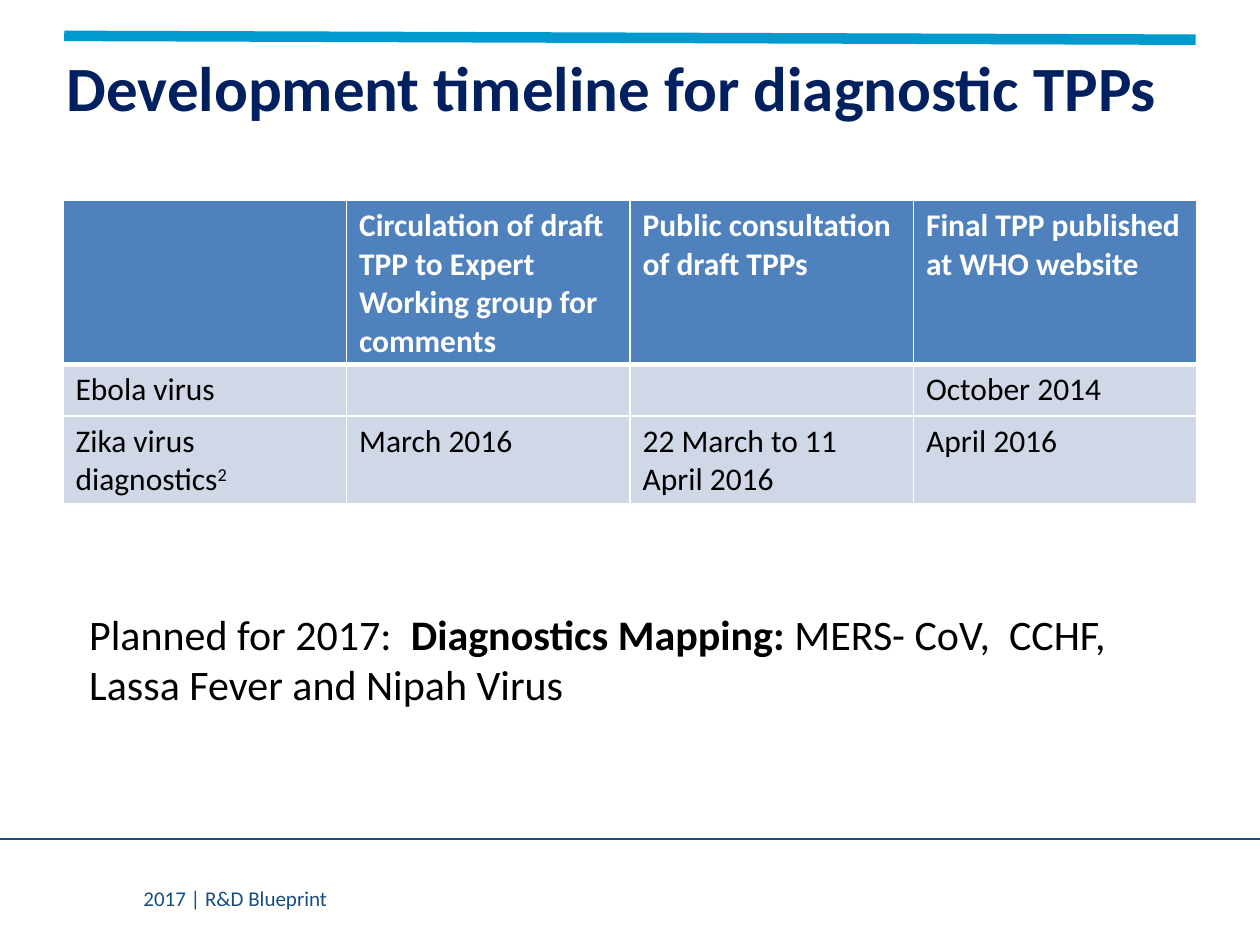
from dataclasses import dataclass
from typing import Optional

from lxml import etree
from pptx import Presentation
from pptx import util as u
from pptx.dml.color import RGBColor
from pptx.enum import shapes, text
from pptx.oxml.ns import qn

WIDTH, HEIGHT = u.Inches(10), u.Inches(7.5)
FONT = "Calibri"
COLORS = {
    "background": "FFFFFE", "navy": "002060", "footer": "174E7F", "accent": "009ACF",
    "header": "4F81BD", "band": "D0D8E8", "border": "FFFFFF", "body": "000000",
}


@dataclass
class Run:
    text: str
    size: float
    color: str
    bold: bool = False
    superscript: bool = False


@dataclass
class Box:
    """Left, top, width and height as shares of the slide's size."""
    left: float
    top: float
    width: float
    height: float

    def place(self) -> dict:
        return {
            "left": int(self.left * WIDTH), "top": int(self.top * HEIGHT),
            "width": int(self.width * WIDTH), "height": int(self.height * HEIGHT),
        }


@dataclass
class Rule:
    """A line whose ends are shares of the slide's size."""
    start: tuple[float, float]
    end: tuple[float, float]
    color: str
    weight: float


RULES = [
    Rule((0, 0.888), (1, 0.888), "footer", 1.5),
    Rule((0.051, 0.038), (0.949, 0.042), "accent", 6),
]
HEADINGS = [
    "",
    "Circulation of draft TPP to Expert Working group for comments",
    "Public consultation of draft TPPs",
    "Final TPP published at WHO website",
]
TIMELINE = [
    ["Ebola virus", "", "", "October 2014"],
    ["Zika virus diagnostics", "March 2016", "22 March to 11 April 2016", "April 2016"],
]
FOOTNOTES = {"Zika virus diagnostics": "2"}
ROW_HEIGHTS = [1.3, 0.41, 0.7]


def rgb(name: str) -> RGBColor:
    return RGBColor.from_string(COLORS[name])


def apply(target, values: dict) -> None:
    for name, value in values.items():
        setattr(target, name, value)


def write(frame, runs: list[Run]) -> None:
    paragraph = frame.paragraphs[0]
    paragraph.alignment = text.PP_ALIGN.LEFT
    for item in runs:
        run = paragraph.add_run()
        run.text = item.text
        apply(run.font, {"name": FONT, "size": u.Pt(item.size), "bold": item.bold})
        run.font.color.rgb = rgb(item.color)
        if item.superscript:
            run._r.get_or_add_rPr().set("baseline", "30000")


def add_text(slide, box: Box, runs: list[Run]) -> None:
    shape = slide.shapes.add_textbox(**box.place())
    shape.text_frame.word_wrap = True
    write(shape.text_frame, runs)


def add_rule(slide, rule: Rule) -> None:
    ends = [int(share * side) for point in (rule.start, rule.end)
            for share, side in zip(point, (WIDTH, HEIGHT))]
    line = slide.shapes.add_connector(shapes.MSO_CONNECTOR.STRAIGHT, *ends)
    line.line.color.rgb = rgb(rule.color)
    line.line.width = u.Pt(rule.weight)
    etree.SubElement(line._element.spPr, qn("a:effectLst"))


def set_borders(cell, weights: dict[str, float]) -> None:
    properties = cell._tc.get_or_add_tcPr()
    for index, (side, weight) in enumerate(weights.items()):
        border = etree.Element(qn(f"a:ln{side}"), w=str(u.Pt(weight)))
        fill = etree.SubElement(border, qn("a:solidFill"))
        etree.SubElement(fill, qn("a:srgbClr"), val=COLORS["border"])
        properties.insert(index, border)


def fill_cell(cell, label: str, row: int) -> None:
    header = row == 0
    color = "background" if header else "body"
    cell.fill.solid()
    cell.fill.fore_color.rgb = rgb("header" if header else "band")
    set_borders(cell, {"L": 1, "R": 1, "T": 3 if row == 1 else 1, "B": 3 if header else 1})
    runs = [Run(label, 18, color, header)] if label else []
    note: Optional[str] = FOOTNOTES.get(label)
    if note:
        runs.append(Run(note, 18, color, superscript=True))
    write(cell.text_frame, runs)
    if not runs:
        cell.text_frame.paragraphs[0].font.size = u.Pt(18)


def add_timeline(slide, box: Box) -> None:
    rows = [HEADINGS, *TIMELINE]
    table = slide.shapes.add_table(len(rows), len(HEADINGS), **box.place()).table
    for row, (labels, height) in enumerate(zip(rows, ROW_HEIGHTS)):
        table.rows[row].height = u.Inches(height)
        for column, label in enumerate(labels):
            fill_cell(table.cell(row, column), label, row)


def set_title(slide, box: Box, run: Run) -> None:
    title = slide.shapes.title
    apply(title, box.place())
    apply(title.text_frame, {
        "vertical_anchor": text.MSO_ANCHOR.MIDDLE,
        "auto_size": text.MSO_AUTO_SIZE.NONE,
        "word_wrap": True,
    })
    write(title.text_frame, [run])


def main() -> None:
    presentation = Presentation()
    apply(presentation, {"slide_width": WIDTH, "slide_height": HEIGHT})
    slide = presentation.slides.add_slide(presentation.slide_layouts[5])
    slide.background.fill.solid()
    slide.background.fill.fore_color.rgb = rgb("background")

    for rule in RULES:
        add_rule(slide, rule)
    add_text(slide, Box(0.104, 0.931, 0.54, 0.04), [Run("2017 | R&D Blueprint", 12, "footer")])
    set_title(slide, Box(0.043, 0.04, 0.907, 0.103),
              Run("Development timeline for diagnostic TPPs", 36, "navy", True))
    add_timeline(slide, Box(0.05, 0.212, 0.9, 0.321))
    add_text(slide, Box(0.061, 0.637, 0.88, 0.12), [
        Run("Planned for 2017:  ", 24, "body"),
        Run("Diagnostics Mapping: ", 24, "body", True),
        Run("MERS- CoV,  CCHF, Lassa Fever and Nipah Virus", 24, "body"),
    ])
    presentation.save("out.pptx")


if __name__ == "__main__":
    main()
